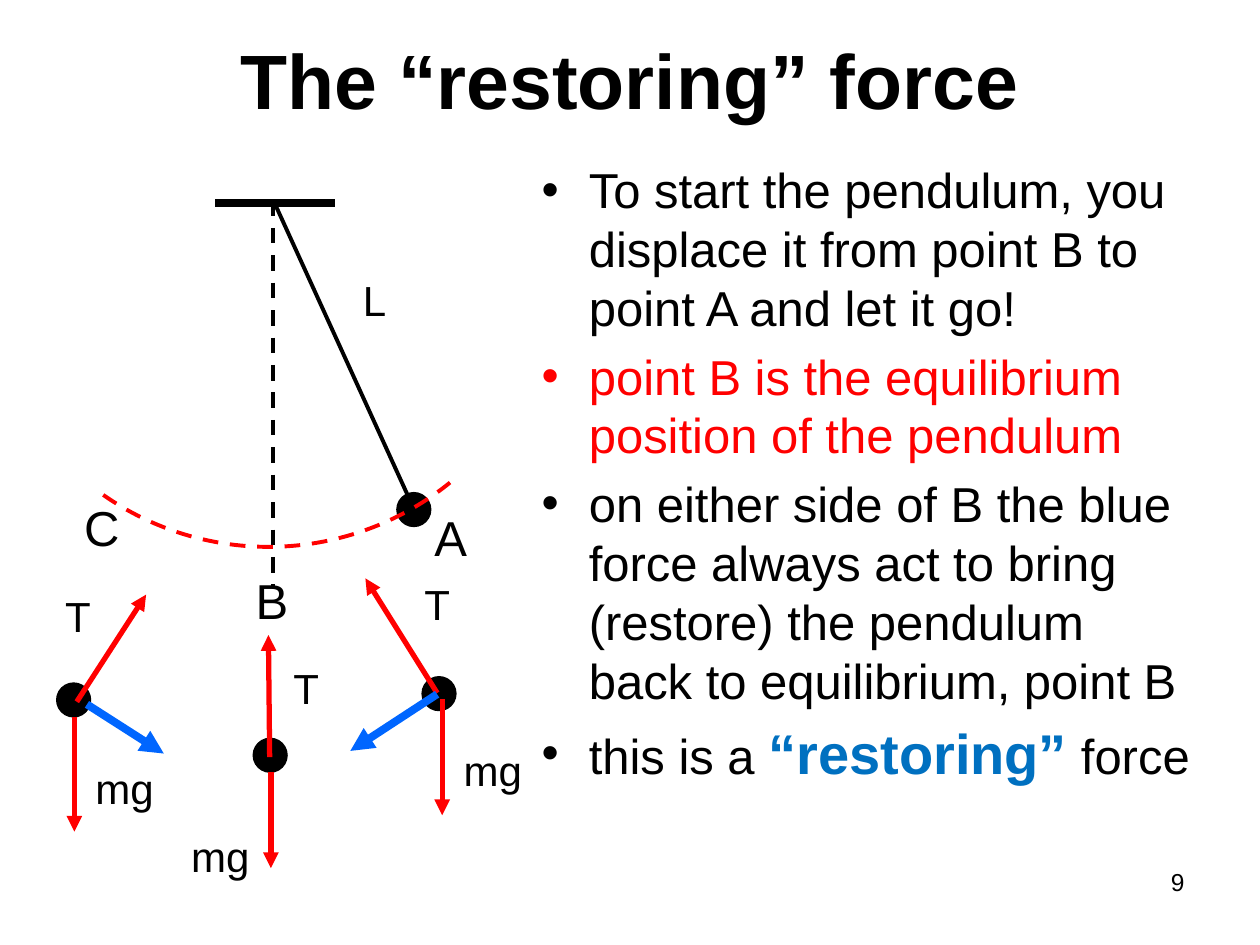
from pptx import Presentation
from pptx.dml.color import RGBColor
from pptx.enum.dml import MSO_LINE
from pptx.enum.shapes import MSO_CONNECTOR, MSO_SHAPE
from pptx.enum.text import MSO_ANCHOR, MSO_AUTO_SIZE, PP_ALIGN
from pptx.oxml.ns import qn
from pptx.util import Pt
from lxml.etree import SubElement

COLORS = {
    "ink": "000000",
    "tension": "FF0000",
    "restoring": "0066FF",
    "emphasis": "0070C0",
}
BALL = 19.4
LABEL_WIDTHS = {"mg": 47.5, "T": 28.8, "L": 28.1, "A": 33.1, "B": 33.1, "C": 34.6}


class PendulumSlide:
    font = "Arial"

    def __init__(self, slide):
        self.slide = slide
        self.shapes = slide.shapes

    def rgb(self, color):
        return RGBColor.from_string(COLORS[color])

    def run(self, paragraph, words, size, color="ink", bold=False):
        run = paragraph.add_run()
        run.text = words
        run.font.name = self.font
        run.font.size = Pt(size)
        run.font.bold = bold
        run.font.color.rgb = self.rgb(color)

    def frame(self, left, top, width, height, wrap=True):
        box = self.shapes.add_textbox(Pt(left), Pt(top), Pt(width), Pt(height))
        box.text_frame.word_wrap = wrap
        return box.text_frame

    def text(self, words, box, size, align, bold=False, anchor=MSO_ANCHOR.TOP):
        frame = self.frame(*box)
        frame.vertical_anchor = anchor
        frame.paragraphs[0].alignment = align
        self.run(frame.paragraphs[0], words, size, bold=bold)

    def label(self, words, left, top, size=24):
        """Place an unwrapped caption whose box fits its text."""
        frame = self.frame(left, top, LABEL_WIDTHS[words], size * 1.2 + 7.2, wrap=False)
        frame.auto_size = MSO_AUTO_SIZE.SHAPE_TO_FIT_TEXT
        self.run(frame.paragraphs[0], words, size)

    def bullets(self, box, items):
        """Each item is a list of (words, size, color, bold) runs."""
        frame = self.frame(*box)
        for index, item in enumerate(items):
            paragraph = frame.add_paragraph() if index else frame.paragraphs[0]
            paragraph.space_before = Pt(5.6)
            properties = paragraph._p.get_or_add_pPr()
            properties.set("marL", str(Pt(27)))
            properties.set("indent", str(-Pt(27)))
            SubElement(properties, qn("a:buFont")).set("typeface", self.font)
            SubElement(properties, qn("a:buChar")).set("char", "•")
            for words, size, color, bold in item:
                self.run(paragraph, words, size, color, bold)

    def line(self, start, end, width, color="ink", dashed=False, arrow=False):
        connector = self.shapes.add_connector(
            MSO_CONNECTOR.STRAIGHT, *(Pt(value) for value in (*start, *end)))
        connector.line.width = Pt(width)
        connector.line.color.rgb = self.rgb(color)
        if dashed:
            connector.line.dash_style = MSO_LINE.DASH
        if arrow:
            SubElement(connector.line._get_or_add_ln(), qn("a:tailEnd")).set("type", "triangle")
        SubElement(connector._element.spPr, qn("a:effectLst"))

    def ball(self, x, y):
        ball = self.shapes.add_shape(
            MSO_SHAPE.OVAL, Pt(x - BALL / 2), Pt(y - BALL / 2), Pt(BALL), Pt(BALL))
        ball.shadow.inherit = False
        ball.fill.solid()
        ball.fill.fore_color.rgb = self.rgb("ink")
        ball.line.color.rgb = self.rgb("ink")
        ball.line.width = Pt(0.75)

    def arc(self, x, y, radius, start, end):
        """Draw a dashed arc about (x, y), clockwise between angles in degrees."""
        arc = self.shapes.add_shape(
            MSO_SHAPE.ARC, Pt(x - radius), Pt(y - radius), Pt(2 * radius), Pt(2 * radius))
        # Angles are stored in 1/60000 degree, adjustments in 1/100000.
        arc.adjustments[0] = start * 0.6
        arc.adjustments[1] = end * 0.6
        arc.shadow.inherit = False
        arc.fill.background()
        arc.line.color.rgb = self.rgb("tension")
        arc.line.width = Pt(2.25)
        arc.line.dash_style = MSO_LINE.DASH

    def free_body(self, center, weight, tension, restoring, weight_label, tension_label):
        """Draw a ball with its force arrows, each given as (start, end)."""
        self.ball(*center)
        self.line(*weight, 3, "tension", arrow=True)
        self.line(*tension, 3, "tension", arrow=True)
        if restoring:
            self.line(*restoring, 4.5, "restoring", arrow=True)
        self.label("mg", *weight_label)
        self.label("T", *tension_label)


def main():
    deck = Presentation()
    deck.slide_width, deck.slide_height = Pt(720), Pt(540)
    page = PendulumSlide(deck.slides.add_slide(deck.slide_layouts[6]))

    page.text("The “restoring” force", (0, 0, 720, 90), 44, PP_ALIGN.CENTER,
              bold=True, anchor=MSO_ANCHOR.MIDDLE)
    page.bullets((302.4, 87.8, 386.6, 383), [
        [("To start the pendulum, you displace it from point B to point A and let it go!",
          28, "ink", False)],
        [("point B is the equilibrium position of the pendulum", 28, "tension", False)],
        [("on either side of B the blue force always act to bring (restore) "
          "the pendulum back to equilibrium, point B", 28, "ink", False)],
        [("this is a ", 28, "ink", False),
         ("“restoring”", 32, "emphasis", True),
         (" ", 28, "emphasis", False),
         ("force", 28, "ink", False)],
    ])

    pivot = (156.2, 114.5)
    page.line((123.1, 115.9), (191.5, 115.9), 4.5)
    page.line(pivot, (156.2, 336.2), 2.25, dashed=True)
    page.line(pivot, (236.9, 291.6), 2.25)
    page.ball(236.5, 291.2)
    page.arc(153.4, 147.6, 164.9, 51, 126.5)
    page.label("L", 200.2, 153.4)
    for point, left, top in (("A", 241.2, 286.6), ("B", 139, 322.6), ("C", 41, 280.8)):
        page.label(point, left, top, 28)

    page.free_body(
        center=(250.9, 396.4),
        weight=((252.7, 399.6), (252.7, 465.8)),
        tension=((249.8, 396), (208.8, 330.5)),
        restoring=((249.8, 396.7), (200.2, 429.1)),
        weight_label=(257.8, 421.9), tension_label=(235.4, 326.9))
    page.free_body(
        center=(42.1, 400),
        weight=((42.5, 409.7), (42.5, 475.2)),
        tension=((43.9, 401), (83.5, 339.8)),
        restoring=((49.7, 402.5), (93.6, 430.6)),
        weight_label=(47.5, 432), tension_label=(30.2, 334.1))
    page.free_body(
        center=(154.4, 431.6),
        weight=((154.8, 441.3), (154.8, 496.1)),
        tension=((154.1, 432.7), (153.4, 362.9)),
        restoring=None,
        weight_label=(102.2, 470.9), tension_label=(160.6, 375.1))

    page.text("9", (516.2, 491.8, 167.8, 37.4), 14, PP_ALIGN.RIGHT)
    deck.save("out.pptx")


if __name__ == "__main__":
    main()
